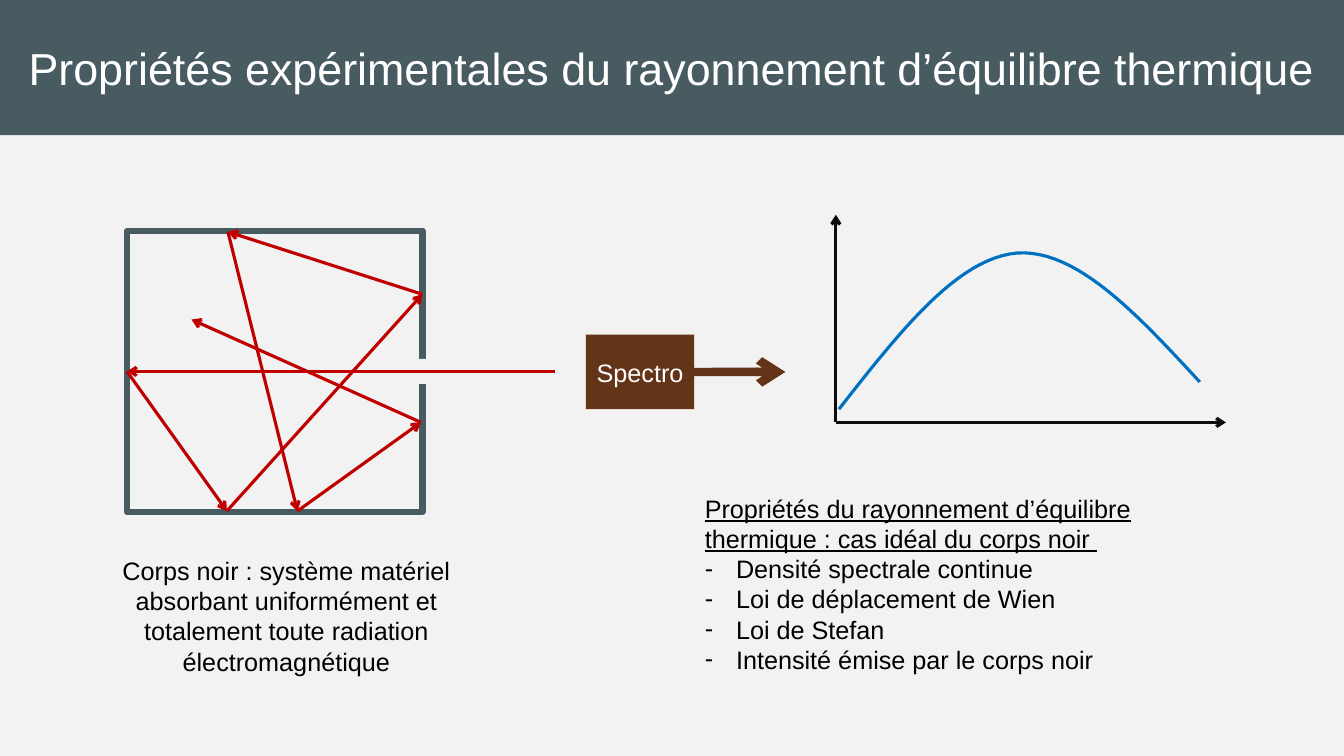
from itertools import pairwise
from lxml.etree import SubElement
from pptx import Presentation
from pptx.dml.color import RGBColor
from pptx.enum.shapes import MSO_CONNECTOR as Line, MSO_SHAPE as Shape
from pptx.enum.text import MSO_ANCHOR as Anchor, MSO_AUTO_SIZE as Fit, PP_ALIGN as Align
from pptx.oxml.ns import qn
from pptx.util import Inches, Pt

TITLE = "Propriétés expérimentales du rayonnement d’équilibre thermique"
CAPTION = ("Corps noir : système matériel absorbant uniformément et "
           "totalement toute radiation électromagnétique")
HEADING = "Propriétés du rayonnement d’équilibre thermique : cas idéal du corps noir "
PROPERTIES = [
    "Densité spectrale continue",
    "Loi de déplacement de Wien",
    "Loi de Stefan",
    "Intensité émise par le corps noir",
]
INSTRUMENT = "Spectro"

SLATE = RGBColor(0x47, 0x5B, 0x61)
PALE = RGBColor(0xF2, 0xF2, 0xF2)
RED = RGBColor(0xC0, 0x00, 0x00)
BROWN = RGBColor(0x64, 0x34, 0x18)
INK = RGBColor(0x0D, 0x0D, 0x0D)
BLUE = RGBColor(0x00, 0x70, 0xC0)
WHITE = RGBColor(0xFF, 0xFF, 0xFF)
BLACK = RGBColor(0x00, 0x00, 0x00)

# Percentages of the slide's width and height
BANNER = (0, 0, 100, 17.87)
CAVITY = (9.45, 30.53, 21.98, 37.2)
OPENING = (30.16, 47.47, 2.93, 3.33)
CAPTION_AREA = (8.18, 72.8, 26.25, 17.47)
SPECTRO = (43.59, 44.27, 8.06, 9.87)
LIST_AREA = (51.69, 64.53, 42.68, 25.6)
RAY = [(41.26, 49.13), (9.45, 49.13), (16.88, 67.6), (31.43, 38.93),
       (16.96, 30.67), (22.13, 67.6), (31.32, 55.87), (14.25, 42.27)]
SPECTRO_OUT = [(51.65, 49.2), (58.44, 49.2)]
ORIGIN, AXIS_TOP, AXIS_RIGHT = (62.19, 55.87), (62.19, 28.4), (91.22, 55.87)
CURVES = [
    [(62.42, 54.13), (66.84, 44.13), (71.19, 34.13), (75.69, 33.47)],
    [(75.69, 33.47), (80.12, 32.93), (84.7, 41.73), (89.27, 50.53)],
]
STEPS = 24

deck = Presentation()
deck.slide_width, deck.slide_height = Inches(13.33), Inches(7.5)
page = deck.slides.add_slide(deck.slide_layouts[1])
page.background.fill.solid()
page.background.fill.fore_color.rgb = PALE


def place(point):
    x, y = point
    return round(deck.slide_width * x / 100), round(deck.slide_height * y / 100)


def frame(area):
    return *place(area[:2]), *place(area[2:])


def move(box, area):
    box.left, box.top, box.width, box.height = frame(area)


def write(para, text, size, color, align=Align.LEFT, underline=False):
    para.alignment = align
    para.space_before = Pt(0)
    span = para.add_run()
    span.text = text
    span.font.name, span.font.size = "Arial", Pt(size)
    span.font.color.rgb = color
    span.font.underline = underline


def rectangle(area, fill=None, outline=None):
    box = page.shapes.add_shape(Shape.RECTANGLE, *frame(area))
    box.shadow.inherit = False
    if fill is None:
        box.fill.background()
    else:
        box.fill.solid()
        box.fill.fore_color.rgb = fill
    if outline is None:
        box.line.fill.background()
    else:
        box.line.color.rgb, box.line.width = outline, Pt(4.5)
    return box


def arrow(start, end, color, width=2.25):
    link = page.shapes.add_connector(Line.STRAIGHT, *place(start), *place(end))
    link.line.color.rgb, link.line.width = color, Pt(width)
    SubElement(link.line._get_or_add_ln(), qn("a:tailEnd"), type="arrow")
    SubElement(link._element.spPr, qn("a:effectLst"))
    return link


def bezier(points, t):
    weights = ((1 - t) ** 3, 3 * t * (1 - t) ** 2, 3 * t ** 2 * (1 - t), t ** 3)
    return tuple(sum(w * p[axis] for w, p in zip(weights, points)) for axis in (0, 1))


def bullet(para, char=None):
    settings = para._p.get_or_add_pPr()
    indent = Inches(0.31) if char else 0
    settings.set("marL", str(indent))
    settings.set("indent", str(-indent))
    if char:
        SubElement(settings, qn("a:buFontTx"))
        SubElement(settings, qn("a:buChar"), char=char)
    else:
        SubElement(settings, qn("a:buNone"))


title = page.shapes.title
move(title, BANNER)
title.fill.solid()
title.fill.fore_color.rgb = SLATE
title.text_frame.vertical_anchor = Anchor.MIDDLE
title.text_frame.auto_size = Fit.NONE
write(title.text_frame.paragraphs[0], TITLE, 32, WHITE, Align.CENTER)

cavity = rectangle(CAVITY, outline=SLATE)
rectangle(OPENING, fill=PALE)
rays = [arrow(start, end, RED) for start, end in pairwise(RAY)]
rays[0].end_connect(cavity, 1)
rays[1].begin_connect(cavity, 1)

caption = page.shapes.add_textbox(*frame(CAPTION_AREA)).text_frame
caption.word_wrap = True
caption.auto_size = Fit.SHAPE_TO_FIT_TEXT
write(caption.paragraphs[0], CAPTION, 18, BLACK, Align.CENTER)

spectro = rectangle(SPECTRO, fill=BROWN)
spectro.text_frame.vertical_anchor = Anchor.MIDDLE
write(spectro.text_frame.paragraphs[0], INSTRUMENT, 18, WHITE, Align.CENTER)
arrow(*SPECTRO_OUT, BROWN, 6).begin_connect(spectro, 3)

for axis_end in (AXIS_TOP, AXIS_RIGHT):
    arrow(ORIGIN, axis_end, INK)

spectrum_points = [place(bezier(points, step / STEPS))
                   for points in CURVES for step in range(STEPS + 1)]
outline = page.shapes.build_freeform(*spectrum_points[0])
outline.add_line_segments(spectrum_points[1:], close=False)
spectrum = outline.convert_to_shape()
spectrum.shadow.inherit = False
spectrum.fill.background()
spectrum.line.color.rgb, spectrum.line.width = BLUE, Pt(2.25)

body = page.placeholders[1]
move(body, LIST_AREA)
body.text_frame.word_wrap = True
body.text_frame.auto_size = Fit.SHAPE_TO_FIT_TEXT
heading = body.text_frame.paragraphs[0]
write(heading, HEADING, 18, BLACK, underline=True)
bullet(heading)
for text in PROPERTIES:
    item = body.text_frame.add_paragraph()
    write(item, text, 18, BLACK)
    bullet(item, "-")

deck.save("out.pptx")
